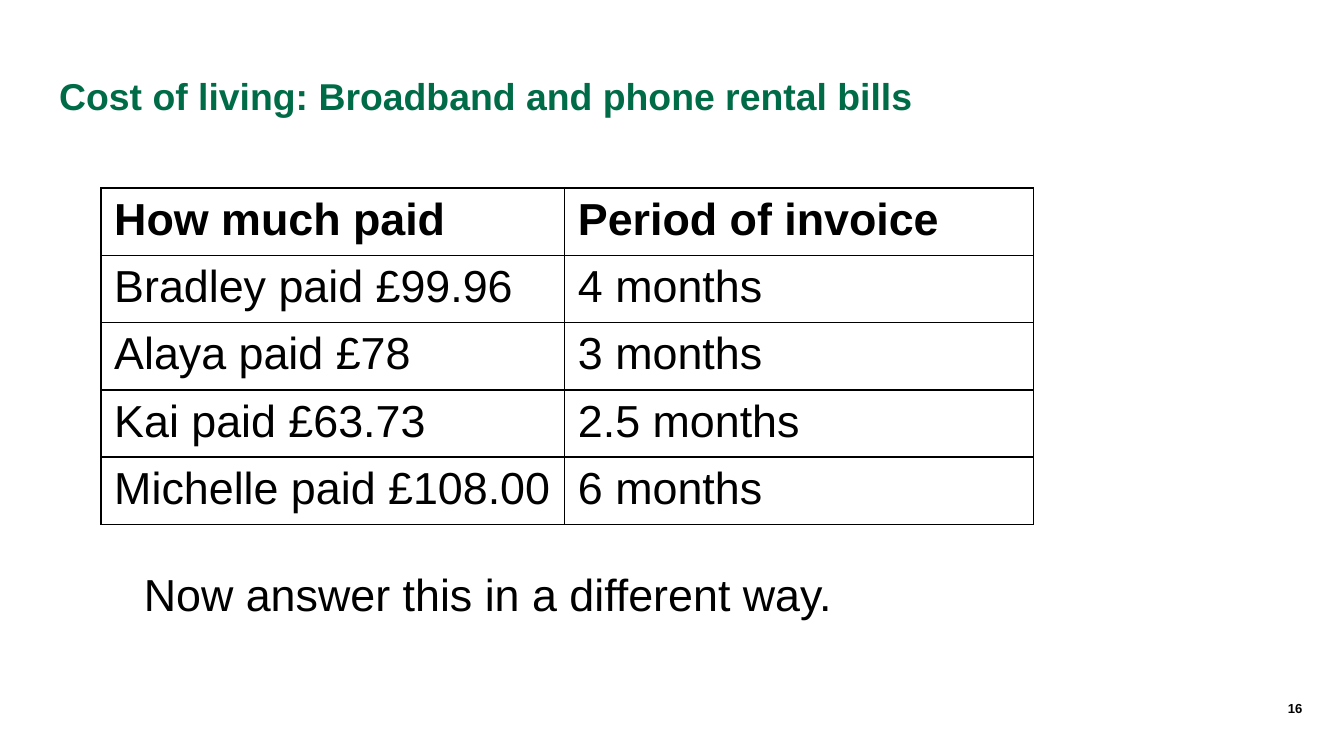
from dataclasses import dataclass

import pptx
import pptx.dml.color
import pptx.enum.text
import pptx.oxml
import pptx.oxml.ns
import pptx.slide
import pptx.table
import pptx.text.text
import pptx.util
from pptx.util import Inches

BLACK = pptx.dml.color.RGBColor(0x00, 0x00, 0x00)
GREEN = pptx.dml.color.RGBColor(0x00, 0x6C, 0x47)
FONT_NAME = "Arial"
BODY_SIZE = 24
BORDER_WIDTH = pptx.util.Pt(1)
SLIDE_WIDTH = Inches(10)
SLIDE_HEIGHT = SLIDE_WIDTH * 9 // 16
ROW_HEIGHT = 0.41
COLUMN_WIDTHS = (3.45, 3.49)
BILLS = (
    ("How much paid", "Period of invoice"),
    ("Bradley paid £99.96", "4 months"),
    ("Alaya paid £78", "3 months"),
    ("Kai paid £63.73", "2.5 months"),
    ("Michelle paid £108.00", "6 months"),
)


@dataclass(frozen=True)
class Label:
    text: str
    left: float
    top: float
    width: float
    height: float
    size: float
    color: pptx.dml.color.RGBColor = BLACK
    bold: bool = False
    alignment: pptx.enum.text.PP_ALIGN = pptx.enum.text.PP_ALIGN.LEFT
    anchor: pptx.enum.text.MSO_ANCHOR = pptx.enum.text.MSO_ANCHOR.TOP


PAGE_NUMBER = Label("16", 8.7, 5.21, 0.99, 0.3, 7, bold=True,
                    alignment=pptx.enum.text.PP_ALIGN.RIGHT)
PROMPT = Label("Now answer this in a different way.", 1.07, 4.22, 7.63, 0.4, BODY_SIZE)
TITLE = Label("Cost of living: Broadband and phone rental bills", 0.44, 0.39, 9.21, 0.64,
              20, GREEN, True, anchor=pptx.enum.text.MSO_ANCHOR.MIDDLE)


def add_run(paragraph: pptx.text.text._Paragraph, text: str, size: float,
            color: pptx.dml.color.RGBColor, bold: bool) -> None:
    run = paragraph.add_run()
    run.text = text
    run.font.name = FONT_NAME
    run.font.size = pptx.util.Pt(size)
    run.font.color.rgb = color
    run.font.bold = bold


def add_label(slide: pptx.slide.Slide, label: Label) -> None:
    shape = slide.shapes.add_textbox(
        Inches(label.left), Inches(label.top), Inches(label.width), Inches(label.height)
    )
    frame = shape.text_frame
    frame.word_wrap = True
    frame.vertical_anchor = label.anchor
    frame.margin_left = frame.margin_right = frame.margin_top = frame.margin_bottom = 0
    paragraph = frame.paragraphs[0]
    paragraph.alignment = label.alignment
    add_run(paragraph, label.text, label.size, label.color, label.bold)


def style_cell(cell: pptx.table._Cell) -> None:
    cell.fill.background()
    properties = cell._tc.get_or_add_tcPr()
    for index, side in enumerate(("lnL", "lnR", "lnT", "lnB")):
        border = pptx.oxml.parse_xml(
            f'<a:{side} {pptx.oxml.ns.nsdecls("a")} w="{BORDER_WIDTH}">'
            f'<a:solidFill><a:srgbClr val="{BLACK}"/></a:solidFill></a:{side}>'
        )
        properties.insert(index, border)


def add_bill_table(slide: pptx.slide.Slide) -> None:
    table = slide.shapes.add_table(
        len(BILLS), len(COLUMN_WIDTHS), Inches(0.75), Inches(1.4),
        Inches(sum(COLUMN_WIDTHS)), Inches(2.5)
    ).table
    table.horz_banding = False
    for column, width in zip(table.columns, COLUMN_WIDTHS):
        column.width = Inches(width)
    for row_index, texts in enumerate(BILLS):
        table.rows[row_index].height = Inches(ROW_HEIGHT)
        for column_index, text in enumerate(texts):
            cell = table.cell(row_index, column_index)
            style_cell(cell)
            add_run(cell.text_frame.paragraphs[0], text, BODY_SIZE, BLACK, row_index == 0)


def main() -> None:
    presentation = pptx.Presentation()
    presentation.slide_width = SLIDE_WIDTH
    presentation.slide_height = SLIDE_HEIGHT
    slide = presentation.slides.add_slide(presentation.slide_layouts[6])
    add_label(slide, PAGE_NUMBER)
    add_bill_table(slide)
    add_label(slide, PROMPT)
    add_label(slide, TITLE)
    presentation.save("out.pptx")


if __name__ == "__main__":
    main()
